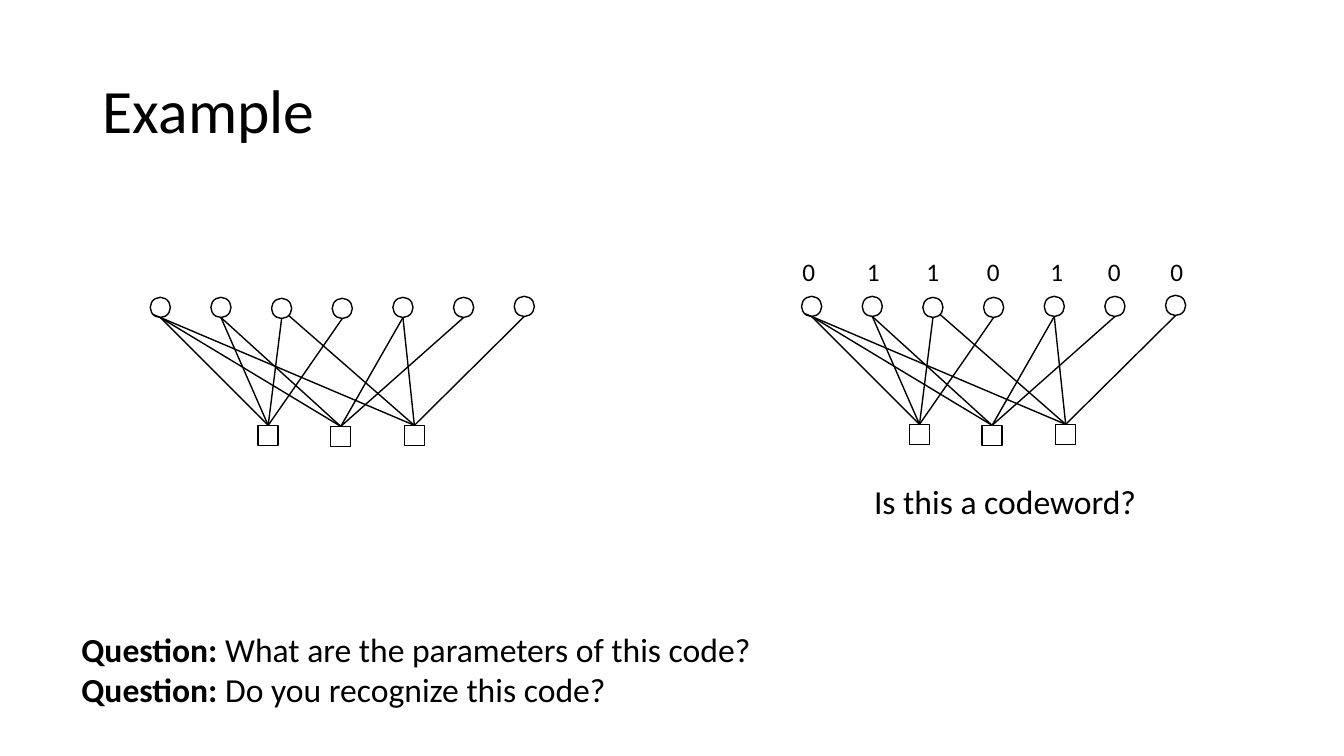
from lxml import etree
from pptx import Presentation
from pptx import util as u
from pptx.dml import color
from pptx.enum import shapes, text
from pptx.oxml import ns

BLACK = "000000"
WHITE = "FFFFFF"


def rgb(value):
    return color.RGBColor.from_string(value)


def write(shape, paragraphs, size, wrap):
    frame = shape.text_frame
    frame.word_wrap = wrap
    for number, runs in enumerate(paragraphs):
        paragraph = frame.add_paragraph() if number else frame.paragraphs[0]
        paragraph.alignment = text.PP_ALIGN.LEFT
        for words, bold in runs:
            run = paragraph.add_run()
            run.text = words
            run.font.color.rgb = rgb(BLACK)
            font_format = {"name": "Calibri", "size": u.Pt(size), "bold": bold}
            for name, value in font_format.items():
                setattr(run.font, name, value)


presentation = Presentation()
presentation.slide_width = u.Inches(13.33)
presentation.slide_height = u.Inches(7.5)
slide = presentation.slides.add_slide(presentation.slide_layouts[5])

title = slide.shapes.title
title_place = {"left": 0.92, "top": 0.4, "width": 11.5, "height": 1.45}
for name, value in title_place.items():
    setattr(title, name, u.Inches(value))
write(title, [[("Example", False)]], 44, True)
title.text_frame.vertical_anchor = text.MSO_ANCHOR.MIDDLE
title.text_frame.paragraphs[0].line_spacing = 0.9

codeword_question = [[("Is this a codeword?", False)]]
code_questions = [
    [("Question:", True), (" What are the parameters of this code?", False)],
    [("Question: ", True), ("Do you recognize this code?", False)],
]
for place, paragraphs in [
    ((8.57, 4.72, 2.82, 0.5), codeword_question),
    ((0.71, 6.19, 6.9, 0.91), code_questions),
]:
    box = slide.shapes.add_textbox(*map(u.Inches, place))
    write(box, paragraphs, 24, False)

node_size = 0.2
bit_span = 3.61
bit_drops = [0.01, 0.01, 0.02, 0.02, 0.01, 0.01, 0]
bit_places = [(bit_span * i / 6, drop) for i, drop in enumerate(bit_drops)]
check_places = [(1.07, 1.28), (1.79, 1.29), (2.52, 1.28)]
check_bits = [(0, 1, 2, 3), (0, 1, 4, 5), (0, 2, 4, 6)]
bottom = (0.1, 0.2)
corner_ends = {(2, 0): (0.03, 0.17), (2, 2): (0.17, 0.17)}
digits = [
    ("0", -0.09, 0.32),
    ("1", 0.55, 0.38),
    ("1", 1.14, 0.38),
    ("0", 1.74, 0.32),
    ("1", 2.37, 0.38),
    ("0", 2.94, 0.38),
    ("0", 3.56, 0.38),
]

for graph_left, graph_top, labels in [(1.49, 2.94, []), (7.95, 2.93, digits)]:
    graph = slide.shapes.add_group_shape()
    nodes = []
    for kind, places in [
        (shapes.MSO_SHAPE.OVAL, bit_places),
        (shapes.MSO_SHAPE.RECTANGLE, check_places),
    ]:
        for x, y in places:
            place = (graph_left + x, graph_top + y, node_size, node_size)
            node = graph.shapes.add_shape(kind, *map(u.Inches, place))
            node.shadow.inherit = False
            node.fill.solid()
            node.fill.fore_color.rgb = rgb(WHITE)
            node.line.color.rgb = rgb(BLACK)
            node.line.width = u.Pt(1)
            nodes.append(node)
    checks = nodes[len(bit_places):]

    for check_number, bits in enumerate(check_bits):
        check_x, check_y = check_places[check_number]
        for bit in bits:
            bit_x, bit_y = bit_places[bit]
            end_x, end_y = corner_ends.get((check_number, bit), bottom)
            ends = (
                graph_left + check_x + node_size / 2,
                graph_top + check_y,
                graph_left + bit_x + end_x,
                graph_top + bit_y + end_y,
            )
            edge = graph.shapes.add_connector(
                shapes.MSO_CONNECTOR.STRAIGHT, *map(u.Inches, ends)
            )
            edge.begin_connect(checks[check_number], 0)
            edge.line.color.rgb = rgb(BLACK)
            edge.line.width = u.Pt(1)
            etree.SubElement(edge._element.spPr, ns.qn("a:effectLst"))

    for digit, x, width in labels:
        place = (graph_left + x, 2.49, width, 0.4)
        label = graph.shapes.add_textbox(*map(u.Inches, place))
        write(label, [[(digit, False)]], 18, True)

presentation.save("out.pptx")
